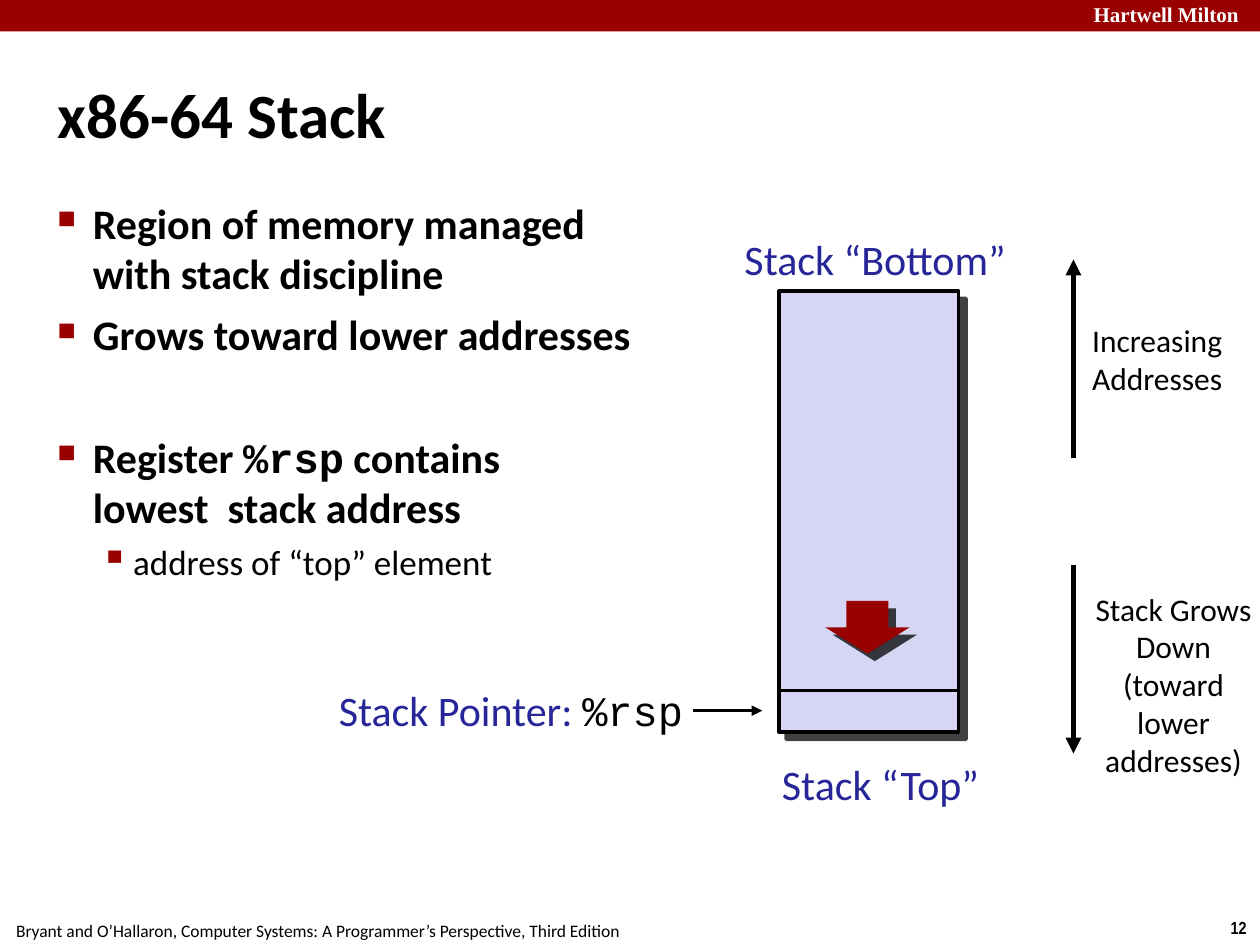
from dataclasses import dataclass
from lxml.etree import SubElement
from pptx import Presentation
from pptx.dml.color import RGBColor as Color
from pptx.enum.shapes import MSO_CONNECTOR as Connector, MSO_SHAPE as Shape
from pptx.enum.text import MSO_ANCHOR as Anchor, PP_ALIGN as Align
from pptx.oxml.ns import qn
from pptx.util import Pt


@dataclass(frozen=True)
class Theme:
    ink: str = "000000"
    paper: str = "FFFFFF"
    accent: str = "990000"
    label: str = "262699"
    memory: str = "D6D6F4"
    sans: str = "Calibri"
    code: str = "Courier New"
    serif: str = "Times New Roman"
    narrow: str = "Arial Narrow"
    title: int = 36
    body: int = 24
    detail: int = 20
    note: int = 18
    header: int = 12
    footer: int = 10
    inset: float = 2.88


class SlideBuilder:
    def __init__(self, theme, page):
        self.theme = theme
        self.page = page

    def style(self, font, size=None, color=None, face=None, bold=None):
        if size:
            font.size = Pt(size)
        if color:
            font.color.rgb = Color.from_string(color)
        if face:
            font.name = face
        if bold is not None:
            font.bold = bold

    def set_text(self, box, lines, size, color=None, face=None, bold=False,
                 align=Align.LEFT, wrap=False, anchor=Anchor.TOP):
        frame = box.text_frame
        frame.word_wrap = wrap
        frame.vertical_anchor = anchor
        frame.margin_left = frame.margin_right = Pt(self.theme.inset)
        frame.margin_top = frame.margin_bottom = Pt(self.theme.inset)
        for index, line in enumerate(lines):
            para = frame.paragraphs[0] if index == 0 else frame.add_paragraph()
            para.alignment = align
            self.style(para.font, size, color or self.theme.ink, face or self.theme.sans, bold)
            para.add_run().text = line
        return frame

    def text(self, bounds, lines, size, **look):
        box = self.page.shapes.add_textbox(*map(Pt, bounds))
        return self.set_text(box, lines, size, **look)

    def shape(self, kind, bounds, fill, outline=None, shadow=False):
        shape = self.page.shapes.add_shape(kind, *map(Pt, bounds))
        shape.shadow.inherit = False
        shape.fill.solid()
        shape.fill.fore_color.rgb = Color.from_string(fill)
        if outline:
            shape.line.color.rgb = Color.from_string(self.theme.ink)
            shape.line.width = Pt(outline)
        else:
            shape.line.fill.background()
        if shadow:
            effects = shape._element.spPr.find(qn("a:effectLst"))
            outer = SubElement(effects, qn("a:outerShdw"), dist=str(Pt(6)),
                               dir="2700000", algn="ctr", rotWithShape="0")
            tint = SubElement(outer, qn("a:srgbClr"), val=self.theme.ink)
            SubElement(tint, qn("a:alpha"), val="75000")
        return shape

    def line(self, start, end, width, arrow=True):
        line = self.page.shapes.add_connector(Connector.STRAIGHT, *map(Pt, start + end))
        line.line.color.rgb = Color.from_string(self.theme.ink)
        line.line.width = Pt(width)
        properties = line._element.spPr
        if arrow:
            SubElement(properties.find(qn("a:ln")), qn("a:tailEnd"), type="triangle")
        SubElement(properties, qn("a:effectLst"))

    def spans(self, para, spans):
        faces = {face for _, face, _ in spans}
        if len(faces) == 1:
            self.style(para.font, face=faces.pop())
            spans = [(words, None, color) for words, _, color in spans]
        for words, face, color in spans:
            for index, piece in enumerate(words.split("\n")):
                if index:
                    para.add_line_break()
                span = para.add_run()
                span.text = piece
                self.style(span.font, color=color, face=face)

    def bullet(self, para, spans, detail=False, before=6):
        theme = self.theme
        left, hang, mark, scale = (43.2, 18.7, "▪", 110) if detail else (20.2, 20.2, "■", 60)
        para.space_before = Pt(before)
        if detail:
            para.level = 1
        properties = para._p.get_or_add_pPr()
        properties.set("marL", str(Pt(left)))
        properties.set("indent", str(-Pt(hang)))
        tint = SubElement(properties, qn("a:buClr"))
        SubElement(tint, qn("a:srgbClr"), val=theme.accent)
        SubElement(properties, qn("a:buSzPct"), val=str(scale * 1000))
        SubElement(properties, qn("a:buChar"), char=mark)
        self.style(para.font, theme.detail if detail else theme.body, theme.ink, bold=not detail)
        self.spans(para, spans)

    def bullets(self, bounds, items):
        frame = self.text(bounds, [], self.theme.body, wrap=True)
        for index, (spans, options) in enumerate(items):
            para = frame.paragraphs[0] if index == 0 else frame.add_paragraph()
            self.bullet(para, spans, **options)


def main():
    theme = Theme()
    deck = Presentation()
    deck.slide_width, deck.slide_height = Pt(720), Pt(540)
    page = deck.slides.add_slide(deck.slide_layouts[6])
    slide = SlideBuilder(theme, page)
    centre = Align.CENTER

    slide.text((695.5, 521.3, 24.5, 18), ["12"], theme.footer, face=theme.narrow,
               bold=True, align=centre)
    slide.text((-1.4, 522.7, 365.8, 18),
               ["Bryant and O’Hallaron, Computer Systems: A Programmer’s Perspective, Third Edition"],
               theme.footer, align=centre)
    slide.shape(Shape.RECTANGLE, (0, 0, 720, 18), theme.accent)
    slide.text((622, -2, 104, 20), ["Hartwell Milton"], theme.header,
               color=theme.paper, face=theme.serif, bold=True)
    slide.text((30, 20, 660, 90), ["x86-64 Stack"], theme.title, bold=True,
               wrap=True, anchor=Anchor.MIDDLE)

    sans, code = theme.sans, theme.code
    slide.bullets((30, 110, 351.5, 428), [
        ([("Region of memory managed with stack discipline", sans, None)], {}),
        ([("Grows toward lower addresses", sans, None)], {}),
        ([("Register ", sans, None), ("%rsp", code, None),
          (" contains \nlowest  stack address", sans, None)], {"before": 41}),
        ([("address of “top” element", sans, None)], {"detail": True, "before": 5}),
    ])

    left, top, width, height = stack = (445, 166.3, 102.8, 252)
    divider = 394.5
    slide.shape(Shape.RECTANGLE, stack, theme.memory, outline=2, shadow=True)
    slide.line((left, divider), (left + width, divider), 2, arrow=False)
    slide.shape(Shape.DOWN_ARROW, (471.6, 343.4, 48.2, 30.2), theme.accent, shadow=True)
    for bounds, words in [((419.8, 130.3, 160.6, 35.3), "Stack “Bottom”"),
                          ((442, 430.6, 122.4, 35.3), "Stack “Top”")]:
        slide.text(bounds, [words], theme.body, color=theme.label, align=centre)

    pointer = slide.text((185.8, 388.1, 207.4, 36), [], theme.body).paragraphs[0]
    pointer.alignment = Align.RIGHT
    slide.style(pointer.font, theme.body)
    slide.spans(pointer, [("Stack Pointer: ", sans, theme.label), ("%rsp", code, theme.ink)])
    slide.line((396, 406.1), (435.6, 406.1), 2)

    axis = 613.4
    notes = [
        ((620.6, 334, 100, 150.5), ["Stack Grows", "Down", "(toward lower addresses)"],
         322.6, 430.6, True),
        ((620.6, 180.7, 81.4, 49.7), ["Increasing", "Addresses"], 262, 148.3, False),
    ]
    for bounds, lines, start, end, wrap in notes:
        slide.line((axis, start), (axis, end), 3)
        panel = slide.shape(Shape.RECTANGLE, bounds, theme.paper)
        slide.set_text(panel, lines, theme.note, align=centre, wrap=wrap)

    deck.save("out.pptx")


if __name__ == "__main__":
    main()
